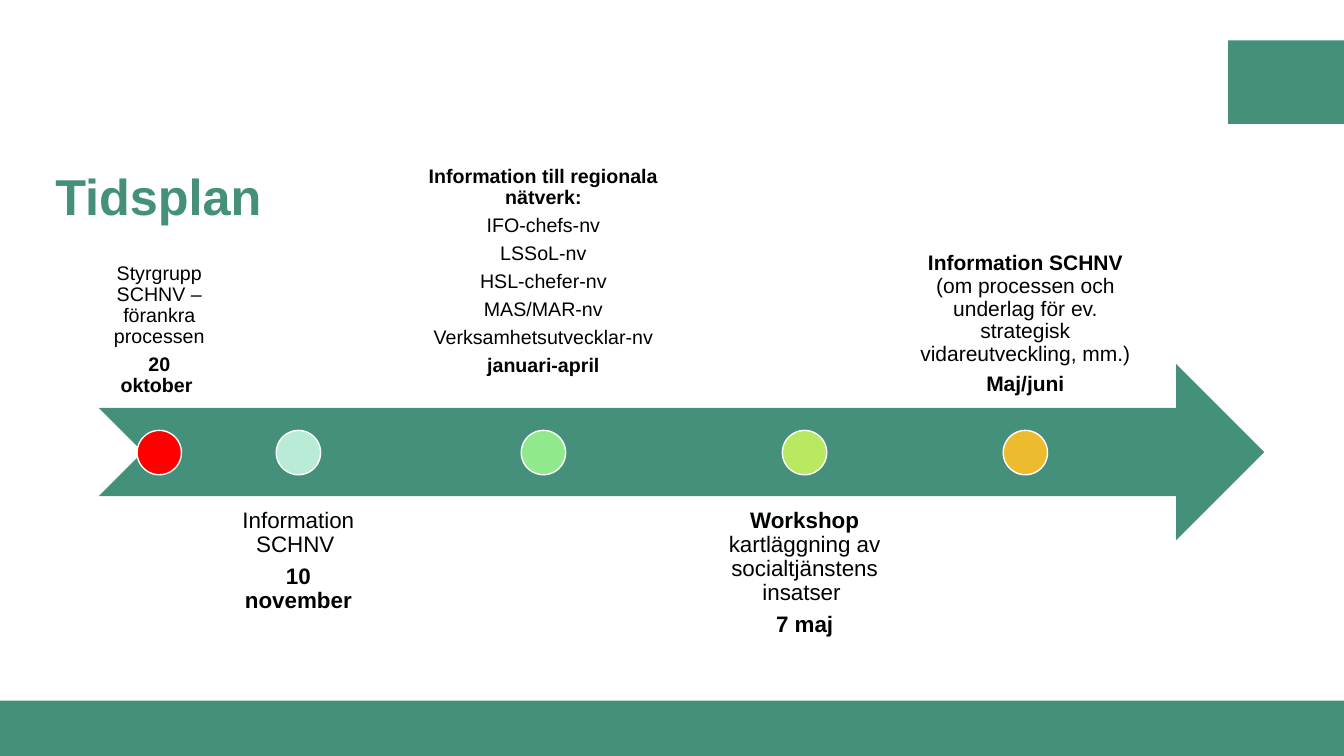
from dataclasses import dataclass

from pptx import Presentation
from pptx.dml.color import RGBColor
from pptx.enum.shapes import MSO_SHAPE
from pptx.enum.text import MSO_ANCHOR, PP_ALIGN
from pptx.util import Inches, Pt


@dataclass(frozen=True)
class Theme:
    font: str = "Arial"
    green: str = "45907A"
    black: str = "000000"
    white: str = "FFFFFF"
    title_size: int = 36
    outline: int = 1
    line_spacing: float = 0.9
    space_after: float = 0.35


@dataclass(frozen=True)
class Run:
    text: str
    bold: bool = False


@dataclass(frozen=True)
class Milestone:
    center: float
    width: float
    color: str
    size: int
    inset: float
    paragraphs: list[list[Run]]
    above: bool = True
    bottom_gap: float = 0


THEME = Theme()
DOT_SIZE = 0.44
DOT_TOP = 4.27
LABEL_HEIGHT = 1.75
LABEL_TOP_ABOVE = 2.3
LABEL_TOP_BELOW = 4.93

NETWORKS = ["IFO-chefs-nv", "LSSoL-nv", "HSL-chefer-nv", "MAS/MAR-nv", "Verksamhetsutvecklar-nv"]

MILESTONES = [
    Milestone(1.58, 1.18, "FF0000", 14, 0.11, [
        [Run("Styrgrupp SCHNV – förankra processen")],
        [Run("20 oktober ", True)],
    ]),
    Milestone(2.96, 1.53, "B8ECD6", 16, 0.12, [
        [Run("Information SCHNV ")],
        [Run("10 november", True)],
    ], above=False),
    Milestone(5.39, 3.26, "91E98E", 14, 0.11, [
        [Run("Information till regionala nätverk:", True)],
        *[[Run(name)] for name in NETWORKS],
        [Run("januari-april", True)],
    ], bottom_gap=0.2),
    Milestone(7.98, 1.88, "B9E960", 16, 0.12, [
        [Run("Workshop", True), Run(" kartläggning av socialtjänstens insatser ")],
        [Run("7 maj", True)],
    ], above=False),
    Milestone(10.17, 2.43, "EDBC2E", 15, 0.12, [
        [Run("Information SCHNV ", True),
         Run("(om processen och underlag för ev. strategisk vidareutveckling, mm.)")],
        [Run("Maj/juni", True)],
    ]),
]


def add_filled(s, kind: MSO_SHAPE, left: float, top: float, width: float, height: float,
               color: str, outline: str | None = None) -> None:
    sp = s.shapes.add_shape(kind, Inches(left), Inches(top), Inches(width), Inches(height))
    sp.shadow.inherit = False
    sp.fill.solid()
    sp.fill.fore_color.rgb = RGBColor.from_string(color)
    if outline:
        sp.line.color.rgb = RGBColor.from_string(outline)
        sp.line.width = Pt(THEME.outline)
    else:
        sp.line.fill.background()


def add_text(s, left: float, top: float, width: float, height: float,
             paragraphs: list[list[Run]], size: int, color: str, anchor: MSO_ANCHOR,
             align: PP_ALIGN, insets: tuple[float, float, float, float],
             space_after: float = 0) -> None:
    sp = s.shapes.add_textbox(Inches(left), Inches(top), Inches(width), Inches(height))
    tf = sp.text_frame
    tf.word_wrap = True
    tf.vertical_anchor = anchor
    tf.margin_left, tf.margin_top, tf.margin_right, tf.margin_bottom = map(Inches, insets)
    for i, runs in enumerate(paragraphs):
        p = tf.add_paragraph() if i else tf.paragraphs[0]
        p.alignment = align
        p.line_spacing = THEME.line_spacing
        p.space_after = Pt(space_after)
        p.font.name = THEME.font
        p.font.size = Pt(size)
        p.font.color.rgb = RGBColor.from_string(color)
        for run in runs:
            r = p.add_run()
            r.text = run.text
            r.font.bold = run.bold


def add_milestone(s, m: Milestone) -> None:
    add_text(s, m.center - m.width / 2, LABEL_TOP_ABOVE if m.above else LABEL_TOP_BELOW,
             m.width, LABEL_HEIGHT, m.paragraphs, m.size, THEME.black,
             MSO_ANCHOR.BOTTOM if m.above else MSO_ANCHOR.TOP, PP_ALIGN.CENTER,
             (m.inset, m.inset, m.inset, m.inset + m.bottom_gap),
             m.size * THEME.space_after)
    add_filled(s, MSO_SHAPE.OVAL, m.center - DOT_SIZE / 2, DOT_TOP, DOT_SIZE, DOT_SIZE,
               m.color, THEME.white)


def main() -> None:
    prs = Presentation()
    prs.slide_width = Inches(13.33)
    prs.slide_height = Inches(7.5)
    s = prs.slides.add_slide(prs.slide_layouts[6])
    add_filled(s, MSO_SHAPE.RECTANGLE, 12.18, 0.4, 1.15, 0.83, THEME.green)
    add_filled(s, MSO_SHAPE.RECTANGLE, 0, 6.95, 13.33, 0.55, THEME.green)
    add_text(s, 0.45, 1.32, 11.39, 1.32, [[Run("Tidsplan", True)]], THEME.title_size,
             THEME.green, MSO_ANCHOR.MIDDLE, PP_ALIGN.LEFT, (0.1, 0.05, 0.1, 0.05))
    add_filled(s, MSO_SHAPE.NOTCHED_RIGHT_ARROW, 0.98, 3.61, 11.56, 1.75, THEME.green)
    for m in MILESTONES:
        add_milestone(s, m)
    prs.save("out.pptx")


if __name__ == "__main__":
    main()
